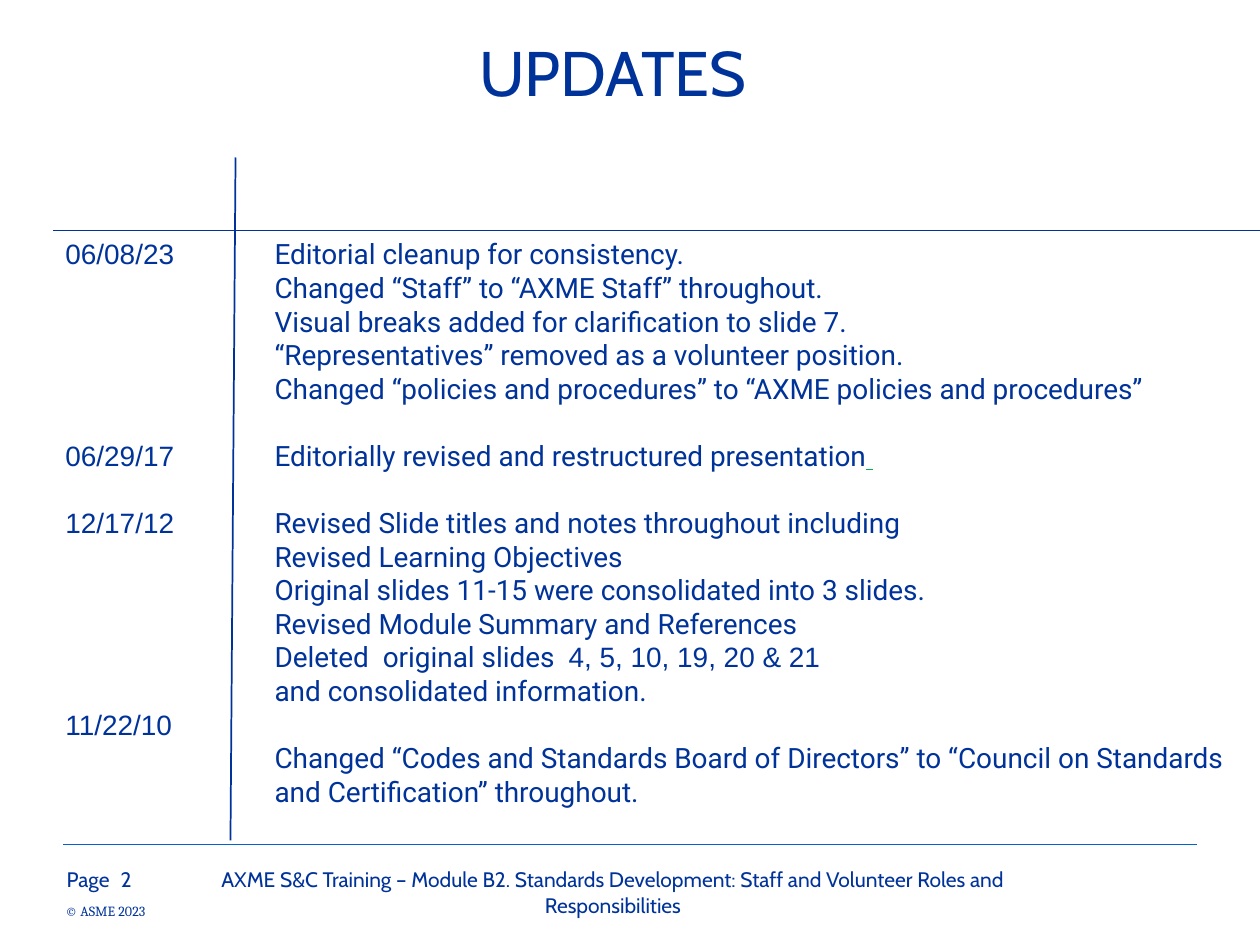
from lxml import etree
from pptx import Presentation
from pptx.enum import shapes, text
from pptx.oxml import ns
from pptx.util import Pt

HUES = {"navy": "003399", "rule": "0066CC", "green": "00B050"}
LINE = 19.2
DATES = [("06/08/23", 0), ("06/29/17", 5), ("12/17/12", 1), ("11/22/10", 5)]
NOTES = [
    ["Editorial cleanup for consistency.",
     "Changed “Staff” to “AXME Staff” throughout.",
     "Visual breaks added for clarification to slide 7.",
     "“Representatives” removed as a volunteer position.",
     "Changed “policies and procedures” to “AXME policies and procedures”"],
    ["Editorially revised and restructured presentation"],
    ["Revised Slide titles and notes throughout including",
     "Revised Learning Objectives",
     "Original slides 11-15 were consolidated into 3 slides.",
     "Revised Module Summary and References",
     "Deleted  original slides  ",
     "and consolidated information."],
    ["Changed “Codes and Standards Board of Directors” to “Council on Standards "
     "and Certification” throughout."],
]


def tint(color, name):
    color.rgb = type(color.rgb or RGB).from_string(HUES[name])


def style(font, size, face):
    font.size, font.name = Pt(size), face
    tint_font(font, "navy")


def tint_font(font, name):
    font.fill.solid()
    font.fill.fore_color.rgb = RGB.from_string(HUES[name])


def place(shape, box):
    shape.left, shape.top, shape.width, shape.height = map(Pt, box)


def rule(slide, start, end, hue, width):
    line = slide.shapes.add_connector(
        shapes.MSO_CONNECTOR.STRAIGHT, *map(Pt, start + end))
    line.line.color.rgb = RGB.from_string(HUES[hue])
    line.line.width = Pt(width)
    etree.SubElement(line._element.spPr, ns.qn("a:effectLst"))


def label(slide, box, words, size=12, face="Cabin", tight=False, align=None):
    shape = slide.shapes.add_textbox(*map(Pt, box))
    frame = shape.text_frame
    frame.word_wrap = not tight
    if tight:
        frame.margin_left = frame.margin_right = 0
        frame.margin_top = frame.margin_bottom = 0
    para = frame.paragraphs[0]
    para.text, para.alignment = words, align
    style(para.font, size, face)


def title(shape, box):
    place(shape, box)
    frame = shape.text_frame
    frame.text = "UPDATES"
    frame.auto_size = text.MSO_AUTO_SIZE.NONE
    frame.vertical_anchor = text.MSO_ANCHOR.MIDDLE
    para = frame.paragraphs[0]
    para.alignment = text.PP_ALIGN.CENTER
    style(para.font, 36, "Cabin")


def column(shape, box, rows, face):
    place(shape, box)
    frame = shape.text_frame
    frame.word_wrap = True
    frame.auto_size = text.MSO_AUTO_SIZE.NONE
    frame.vertical_anchor = text.MSO_ANCHOR.TOP
    for i, (words, gap) in enumerate(rows):
        para = frame.add_paragraph() if i else frame.paragraphs[0]
        para.text = words
        props = para._p.get_or_add_pPr()
        props.set("marL", "0")
        props.set("indent", "0")
        etree.SubElement(props, ns.qn("a:buNone"))
        para.line_spacing = Pt(LINE)
        para.space_before, para.space_after = Pt(gap * LINE), Pt(0)
        style(para.font, 16, face)
    return frame.paragraphs


def table(slide, dates, notes, box):
    left, top, width, height = box
    column(dates, (left, top, 104.4, height), DATES, "Arial")
    rows = [(words, int(g > 0 and i == 0))
            for g, group in enumerate(NOTES) for i, words in enumerate(group)]
    paras = column(notes, (left + 119.5, top, width - 119.5, height), rows, "Roboto")
    for para in paras:
        if para.text.startswith("Editorially"):
            tail = para.add_run()
            tail.text = " "
            tail.font.underline = True
            tint_font(tail.font, "green")
        elif para.text.startswith("Deleted"):
            tail = para.add_run()
            tail.text = "4, 5, 10, 19, 20 & 21"
            tail.font.name = "Arial"
    rule(slide, (left + 104.4, top - 41.8), (left + 101.5, top + 348.4), "navy", 1)
    rule(slide, (left, top), (left + width, top), "navy", 1)


def footer(slide, box):
    left, top, width, height = box
    rule(slide, (left, top), (left + width, top), "rule", 0.75)
    label(slide, (left - 5, top + 9.4, 167.8, 37.4), "Page")
    label(slide, (left + 25.9, top + 9.4, 33.8, 37.4), "2")
    label(slide, (left + 74.2, top + 9.4, 480.2, 37.4),
          "AXME S&C Training – Module B2. Standards Development: "
          "Staff and Volunteer Roles and Responsibilities",
          align=text.PP_ALIGN.CENTER)
    label(slide, (left + 1.4, top + 33.1, 49, 9.4), "© ASME 2023", 8, "Cambria", True)


def main():
    deck = Presentation()
    deck.slide_width, deck.slide_height = Pt(720), Pt(540)
    slide = deck.slides.add_slide(deck.slide_layouts[3])
    head, dates, notes = slide.placeholders
    title(head, (-0.7, -2.9, 702, 87.1))
    table(slide, dates, notes, (30.2, 131.8, 689.8, 361.4))
    footer(slide, (36, 482.4, 648, 57.6))
    deck.save("out.pptx")


from pptx.dml.color import RGBColor as RGB

if __name__ == "__main__":
    main()
